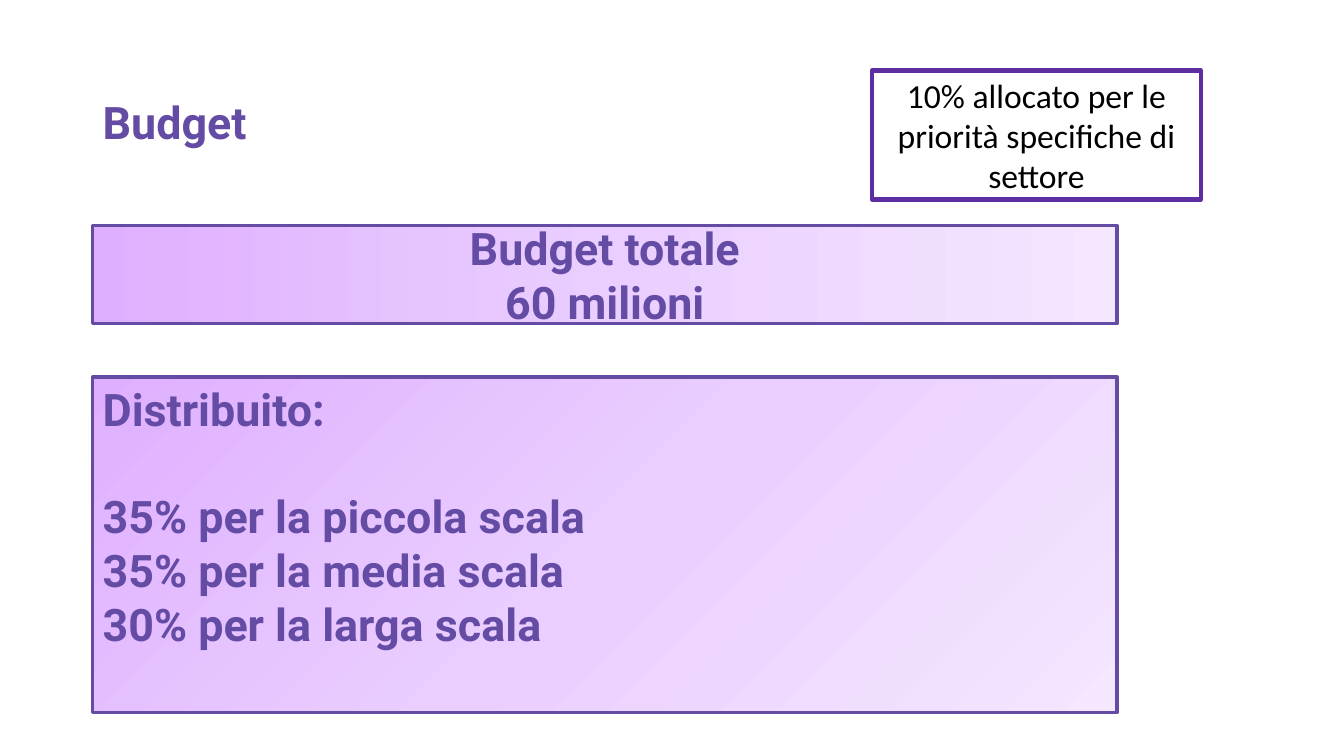
from copy import deepcopy

from pptx import Presentation
from pptx import util as u
from pptx.dml.color import RGBColor
from pptx.enum import shapes, text

COLORS = {"purple": "644BA4", "violet": "5D2EA2", "white": "FFFFFF", "black": "000000"}
GRADIENT = [(0, "DFAFFF"), (0.5, "EACEFF"), (1, "F4E7FF")]
TITLE = ["Budget"]
TOTAL = ["Budget totale", "60 milioni"]
SHARES = [
    "Distribuito:",
    "35% per la piccola scala",
    "35% per la media scala",
    "30% per la larga scala",
]
PRIORITY = ["10% allocato per le priorità specifiche di settore"]
LEFT, PANEL_WIDTH = 0.92, 10.16


def write_text(box, lines, size=32, font="Roboto", color="purple", bold=True,
               align=text.PP_ALIGN.LEFT, anchor=text.MSO_ANCHOR.MIDDLE,
               line_spacing=None, heading_gap=0):
    frame = box.text_frame
    frame.word_wrap = True
    frame.vertical_anchor = anchor
    for index, line in enumerate(lines):
        para = frame.paragraphs[0] if index == 0 else frame.add_paragraph()
        para.alignment = align
        if line_spacing:
            para.line_spacing = line_spacing
        if index == 0 and heading_gap:
            para.space_after = u.Pt(heading_gap)
        span = para.add_run()
        span.text = line
        span.font.size = u.Pt(size)
        span.font.name = font
        span.font.bold = bold
        span.font.color.rgb = RGBColor.from_string(COLORS[color])


def add_box(page, left, top, width, height, line, weight):
    box = page.shapes.add_shape(
        shapes.MSO_SHAPE.RECTANGLE,
        u.Inches(left), u.Inches(top), u.Inches(width), u.Inches(height))
    box.shadow.inherit = False
    box.line.color.rgb = RGBColor.from_string(COLORS[line])
    box.line.width = u.Pt(weight)
    return box


def add_panel(page, top, height, angle):
    box = add_box(page, LEFT, top, PANEL_WIDTH, height, "purple", 2.25)
    box.fill.gradient()
    box.fill.gradient_angle = angle
    first = box.fill._fill._gradFill.gsLst[0]
    first.addnext(deepcopy(first))
    for stop, (position, color) in zip(box.fill.gradient_stops, GRADIENT):
        stop.position = position
        stop.color.rgb = RGBColor.from_string(color)
    return box


def main():
    deck = Presentation()
    deck.slide_width, deck.slide_height = u.Inches(13.33), u.Inches(7.5)
    page = deck.slides.add_slide(deck.slide_layouts[6])

    title = page.shapes.add_textbox(
        u.Inches(LEFT), u.Inches(0.88), u.Inches(11.96), u.Inches(0.65))
    write_text(title, TITLE, anchor=text.MSO_ANCHOR.BOTTOM, line_spacing=0.9)

    shares = add_panel(page, 3.74, 3.33, 315)
    write_text(shares, SHARES, anchor=text.MSO_ANCHOR.TOP, heading_gap=38)

    total = add_panel(page, 2.24, 0.97, 0)
    write_text(total, TOTAL, align=text.PP_ALIGN.CENTER)

    priority = add_box(page, 8.65, 0.7, 3.26, 1.28, "violet", 3)
    priority.fill.solid()
    priority.fill.fore_color.rgb = RGBColor.from_string(COLORS["white"])
    write_text(priority, PRIORITY, size=24, font="Calibri", color="black",
               bold=False, align=text.PP_ALIGN.CENTER)

    deck.save("out.pptx")


if __name__ == "__main__":
    main()
